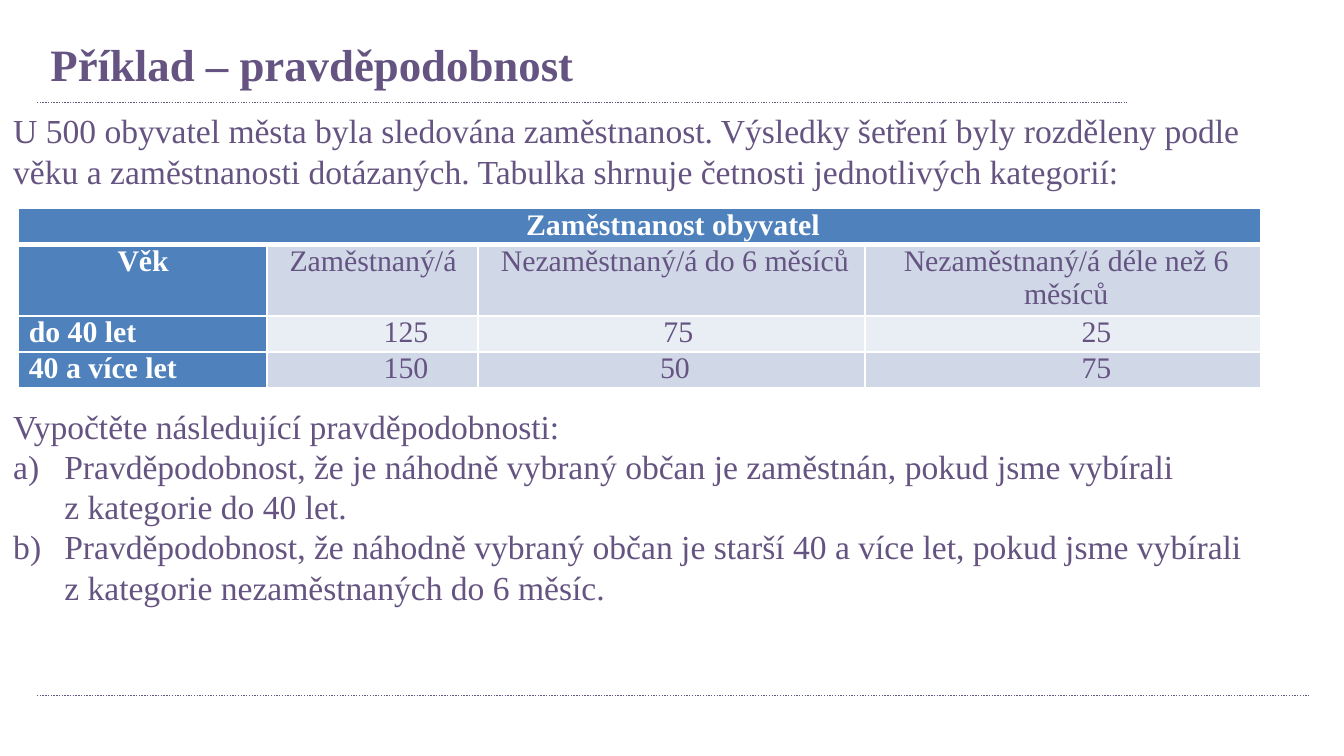
from dataclasses import dataclass

from lxml.etree import SubElement
from pptx import Presentation
from pptx.dml.color import RGBColor
from pptx.enum.dml import MSO_LINE_DASH_STYLE as Dash
from pptx.enum.shapes import MSO_CONNECTOR
from pptx.enum.text import MSO_ANCHOR as Anchor, PP_ALIGN as Align
from pptx.oxml import parse_xml
from pptx.oxml.ns import nsdecls, qn
from pptx.util import Inches, Pt

WIDTH = Inches(10)
HEIGHT = WIDTH * 9 // 16
HARD_SPACE = chr(160)


@dataclass(frozen=True)
class Theme:
    font: str = "Times New Roman"
    text: str = "655481"
    white: str = "FFFFFF"
    header: str = "4F81BD"
    band_dark: str = "D0D8E8"
    band_light: str = "E9EDF4"
    title_size: int = 24
    body_size: int = 18
    table_size: int = 16
    table_gap: int = 115


@dataclass(frozen=True)
class Box:
    """Place and size in percent of the slide."""
    left: float
    top: float
    width: float
    height: float

    def lengths(self):
        return (across(self.left), down(self.top),
                across(self.width), down(self.height))


THEME = Theme()

COLUMN_SHARES = [1.85, 1.57, 2.88, 2.94]
ROW_SHARES = [1, 2, 1, 1]
TABLE_ROWS = [
    ["Zaměstnanost obyvatel", "", "", ""],
    ["Věk", "Zaměstnaný/á", "Nezaměstnaný/á do 6 měsíců",
     "Nezaměstnaný/á déle než 6 měsíců"],
    ["do 40 let", "125", "75", "25"],
    ["40 a více let", "150", "50", "75"],
]
CELL_INDENTS = [  # inches
    [0.5, 0, 0, 0],
    [0.01, 0.01, 0.05, 0.05],
    [0.01, 0.5, 0.1, 0.5],
    [0.01, 0.5, 0.05, 0.5],
]
INTRO = ("U 500 obyvatel města byla sledována zaměstnanost. Výsledky šetření byly "
         "rozděleny podle věku a zaměstnanosti dotázaných. Tabulka shrnuje četnosti "
         "jednotlivých kategorií:")
TASK = "Vypočtěte následující pravděpodobnosti:"
QUESTIONS = [
    "Pravděpodobnost, že je náhodně vybraný občan je zaměstnán, pokud jsme vybírali "
    f"z{HARD_SPACE}kategorie do 40 let.",
    "Pravděpodobnost, že náhodně vybraný občan je starší 40 a více let, pokud jsme "
    f"vybírali z{HARD_SPACE}kategorie nezaměstnaných do 6 měsíc.",
]


def across(percent):
    return round(WIDTH * percent / 100)


def down(percent):
    return round(HEIGHT * percent / 100)


def format_runs(paragraph, size, color=THEME.text, bold=False):
    for run in paragraph.runs:
        run.font.name = THEME.font
        run.font.size = Pt(size)
        run.font.bold = bold
        run.font.color.rgb = RGBColor.from_string(color)


def indent(paragraph, left, first_line=0):
    properties = paragraph._p.get_or_add_pPr()
    properties.set("marL", str(Inches(left)))
    properties.set("indent", str(Inches(first_line)))
    return properties


def add_rule(slide, left, right, top):
    rule = slide.shapes.add_connector(
        MSO_CONNECTOR.STRAIGHT, across(left), down(top), across(right), down(top))
    rule.line.color.rgb = RGBColor.from_string(THEME.text)
    rule.line.width = Pt(0.75)
    rule.line.dash_style = Dash.ROUND_DOT
    SubElement(rule._element.spPr, qn("a:effectLst"))


def place_title(slide, box, text):
    title = slide.shapes.title
    title.left, title.top, title.width, title.height = box.lengths()
    title.text_frame.text = text
    title.text_frame.vertical_anchor = Anchor.MIDDLE
    paragraph = title.text_frame.paragraphs[0]
    paragraph.alignment = Align.LEFT
    format_runs(paragraph, THEME.title_size, bold=True)


def add_body(slide, box):
    """Intro above the table, then the task with its lettered questions."""
    frame = slide.shapes.add_textbox(*box.lengths()).text_frame
    frame.word_wrap = True
    frame.text = INTRO
    task = frame.add_paragraph()
    task.text = TASK
    task.space_before = Pt(THEME.table_gap)
    for question in QUESTIONS:
        paragraph = frame.add_paragraph()
        paragraph.text = question
        properties = indent(paragraph, 0.38, -0.38)
        SubElement(properties, qn("a:buFont"), typeface="+mj-lt")
        SubElement(properties, qn("a:buAutoNum"), type="alphaLcParenR")
    for paragraph in frame.paragraphs:
        format_runs(paragraph, THEME.body_size)


def set_borders(cell, row):
    """White borders, thicker between the heading row and the rest."""
    widths = {"L": 1, "R": 1, "T": 3 if row == 1 else 1, "B": 3 if row == 0 else 1}
    properties = cell._tc.get_or_add_tcPr()
    for position, (side, width) in enumerate(widths.items()):
        properties.insert(position, parse_xml(
            f'<a:ln{side} {nsdecls("a")} w="{Pt(width)}"><a:solidFill>'
            f'<a:srgbClr val="{THEME.white}"/></a:solidFill></a:ln{side}>'))


def format_cell(cell, row, column):
    is_header = row == 0 or column == 0
    band = THEME.band_light if row == 2 else THEME.band_dark
    cell.fill.solid()
    cell.fill.fore_color.rgb = RGBColor.from_string(THEME.header if is_header else band)
    set_borders(cell, row)
    cell.margin_left = cell.margin_right = Inches(0.07)
    cell.margin_top = cell.margin_bottom = 0
    cell.text_frame.text = TABLE_ROWS[row][column]
    paragraph = cell.text_frame.paragraphs[0]
    paragraph.alignment = Align.LEFT if row > 1 and column == 0 else Align.CENTER
    indent(paragraph, CELL_INDENTS[row][column])
    format_runs(paragraph, THEME.table_size,
                THEME.white if is_header else THEME.text, is_header)


def add_employment_table(slide, box):
    left, top, width, height = box.lengths()
    table = slide.shapes.add_table(
        len(ROW_SHARES), len(COLUMN_SHARES), left, top, width, height).table
    table.first_row = table.horz_banding = False
    for column, share in zip(table.columns, COLUMN_SHARES):
        column.width = round(width * share / sum(COLUMN_SHARES))
    for row, share in zip(table.rows, ROW_SHARES):
        row.height = round(height * share / sum(ROW_SHARES))
    for row in range(len(ROW_SHARES)):
        for column in range(len(COLUMN_SHARES)):
            format_cell(table.cell(row, column), row, column)
    table.cell(0, 0).merge(table.cell(0, len(COLUMN_SHARES) - 1))


def build_example_slide(presentation):
    slide = presentation.slides.add_slide(presentation.slide_layouts[5])
    add_rule(slide, 2.75, 83.85, 13.6)
    add_rule(slide, 2.75, 97.45, 92)
    place_title(slide, Box(2.75, 3.4, 49.6, 9.96), "Příklad – pravděpodobnost")
    add_body(slide, Box(0, 13.7, 95.2, 73))
    add_employment_table(slide, Box(1.35, 27.6, 92.45, 23.65))


def main():
    presentation = Presentation()
    presentation.slide_width, presentation.slide_height = WIDTH, HEIGHT
    build_example_slide(presentation)
    presentation.save("out.pptx")


if __name__ == "__main__":
    main()
